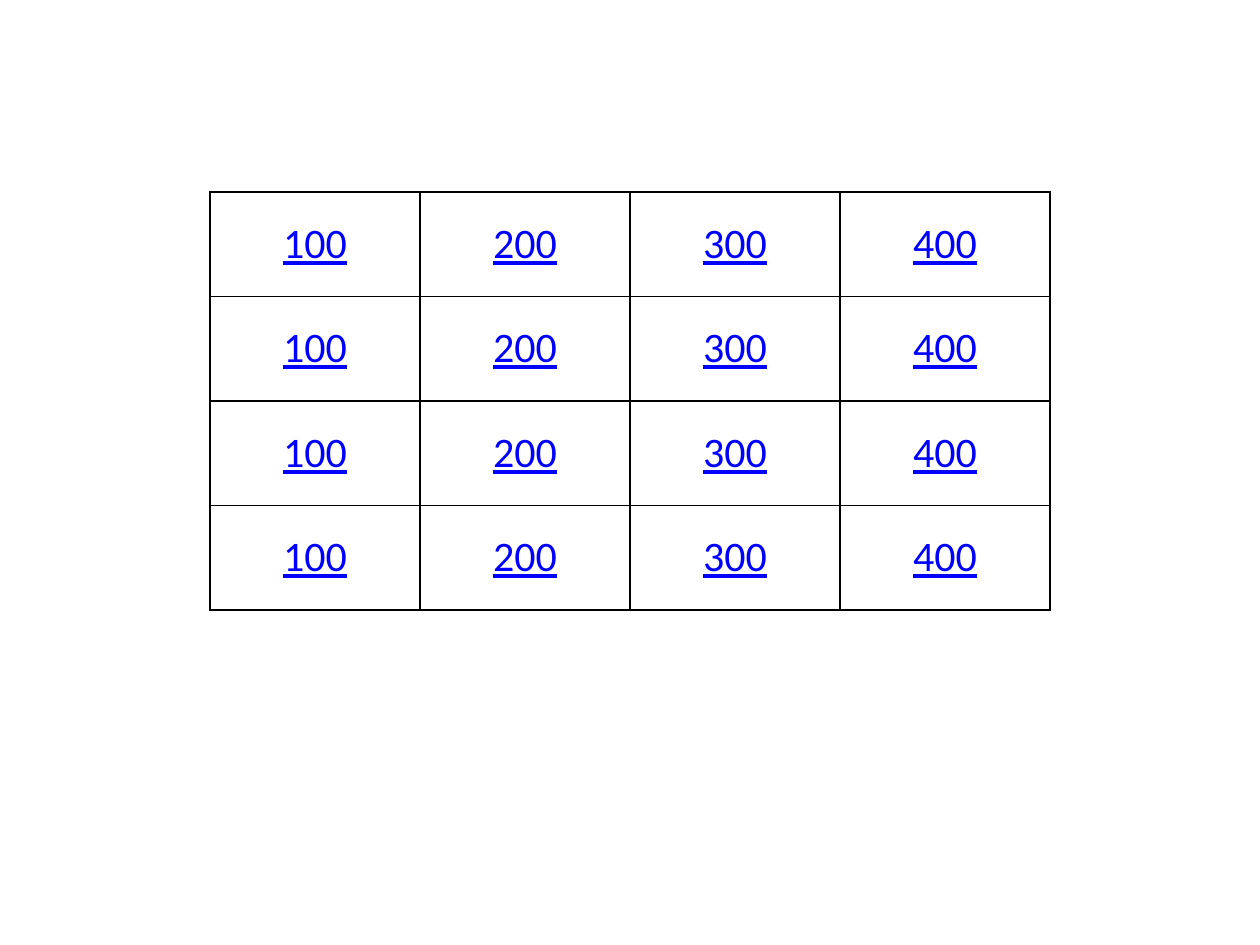
from lxml import etree
from pptx import Presentation
from pptx import util as u
from pptx.dml.color import RGBColor
from pptx.enum import text
from pptx.oxml.ns import qn

PX = u.Inches(1) / 126
BLACK = RGBColor(0x00, 0x00, 0x00)
BLUE = RGBColor(0x00, 0x00, 0xFF)


def px(n):
    return u.Emu(round(n * PX))


class Board:
    """Style and current slide of the quiz board."""
    font = "Calibri"
    size = u.Pt(24)
    border = u.Pt(1)

    def __init__(self, slide):
        self.slide = slide

    def table(self, x, y, w, h, rows):
        n_rows, n_cols = len(rows), len(rows[0])
        frame = self.slide.shapes.add_table(n_rows, n_cols, px(x), px(y), px(w), px(h))
        tbl = frame.table
        tbl.first_row = tbl.horz_banding = False
        for col in tbl.columns:
            col.width = px(w / n_cols)
        for row in tbl.rows:
            row.height = px(h / n_rows)
        for r, values in enumerate(rows):
            for c, value in enumerate(values):
                self.cell(tbl.cell(r, c), value)

    def cell(self, cell, value):
        cell.vertical_anchor = text.MSO_ANCHOR.MIDDLE
        self.borders(cell)
        cell.fill.background()
        p = cell.text_frame.paragraphs[0]
        p.text = str(value)
        p.alignment = text.PP_ALIGN.CENTER
        font = p.runs[0].font
        font.name, font.size, font.underline = self.font, self.size, True
        font.color.rgb = BLUE

    def borders(self, cell):
        tc_pr = cell._tc.get_or_add_tcPr()
        for side in ("lnL", "lnR", "lnT", "lnB"):
            ln = etree.SubElement(tc_pr, qn("a:" + side), w=str(int(self.border)))
            fill = etree.SubElement(ln, qn("a:solidFill"))
            etree.SubElement(fill, qn("a:srgbClr"), val=str(BLACK))


def main():
    prs = Presentation()
    prs.slide_width, prs.slide_height = px(1260), px(945)
    board = Board(prs.slides.add_slide(prs.slide_layouts[6]))

    # Point values: one row per question, same values in each
    points = range(100, 500, 100)
    board.table(210, 192, 840, 418, [points] * 4)

    prs.save("out.pptx")


if __name__ == "__main__":
    main()
